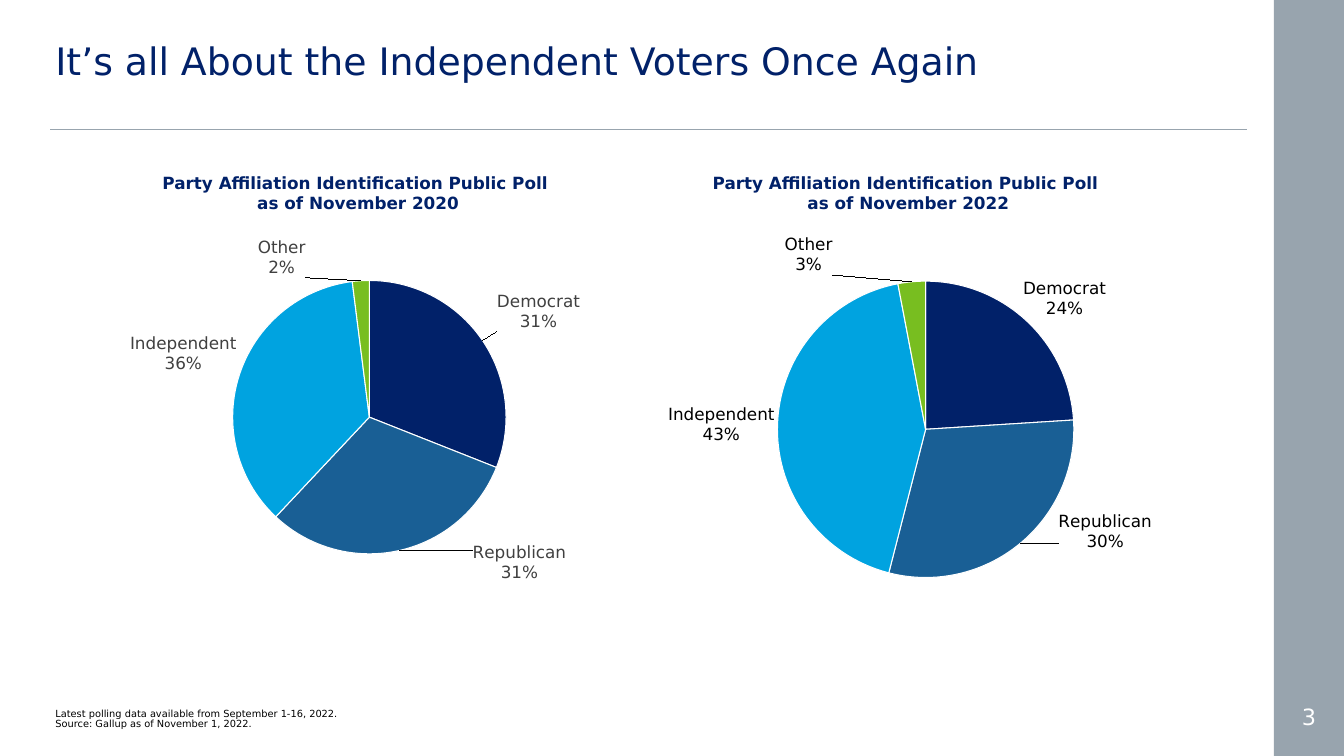
from copy import deepcopy

from pptx import Presentation
from pptx.chart.data import CategoryChartData
from pptx.dml.color import RGBColor
from pptx.enum.chart import XL_CHART_TYPE, XL_LABEL_POSITION
from pptx.enum.shapes import MSO_CONNECTOR, MSO_SHAPE
from pptx.enum.text import MSO_ANCHOR, PP_ALIGN
from pptx.oxml import parse_xml
from pptx.oxml.ns import nsdecls, qn
from pptx.util import Emu, Pt

PIE = XL_CHART_TYPE.PIE
OUT = XL_LABEL_POSITION.OUTSIDE_END
RECT = MSO_SHAPE.RECTANGLE
LINE = MSO_CONNECTOR.STRAIGHT
TOP, BOTTOM = MSO_ANCHOR.TOP, MSO_ANCHOR.BOTTOM
LEFT, MID = PP_ALIGN.LEFT, PP_ALIGN.CENTER

NAVY = RGBColor(0x01, 0x21, 0x69)
BLUE = RGBColor(0x19, 0x5F, 0x95)
SKY = RGBColor(0x00, 0xA3, 0xE0)
GREEN = RGBColor(0x78, 0xBE, 0x20)
GRAY = RGBColor(0x98, 0xA4, 0xAE)
DARK = RGBColor(0x40, 0x40, 0x40)
BLACK = RGBColor(0x00, 0x00, 0x00)
WHITE = RGBColor(0xFF, 0xFF, 0xFF)

SCALE = 12700
FONT = "DejaVu Sans"
PARTY = {"Democrat": NAVY, "Republican": BLUE, "Independent": SKY, "Other": GREEN}


def px(*nums):
    return [Emu(n * SCALE) for n in nums]


def layout(inner=False, **spots):
    modes = '<c:layoutTarget val="inner"/>' if inner else ""
    if inner:
        modes += '<c:xMode val="edge"/><c:yMode val="edge"/>'
    parts = "".join(f'<c:{key} val="{val}"/>' for key, val in spots.items())
    return parse_xml(
        f'<c:layout {nsdecls("c")}><c:manualLayout>{modes}{parts}'
        "</c:manualLayout></c:layout>"
    )


class Deck:
    def __init__(self):
        self.prs = Presentation()
        self.prs.slide_width, self.prs.slide_height = px(1920, 1080)
        self.slide = self.prs.slides.add_slide(self.prs.slide_layouts[6])
        self.shapes = self.slide.shapes

    def style(self, font, size, color, bold=False):
        form = {"name": FONT, "size": Pt(size), "bold": bold}
        for key, val in form.items():
            setattr(font, key, val)
        font.color.rgb = color

    def bar(self, box, color):
        shape = self.shapes.add_shape(RECT, *px(*box))
        shape.shadow.inherit = False
        shape.fill.solid()
        shape.fill.fore_color.rgb = color
        shape.line.fill.background()

    def rule(self, ends, color, width):
        line = self.shapes.add_connector(LINE, *px(*ends))
        line.line.color.rgb = color
        line.line.width = Pt(width)
        line._element.spPr.append(parse_xml(f'<a:effectLst {nsdecls("a")}/>'))

    def text(self, box, lines, size, color, bold=False, align=LEFT,
             anchor=TOP, space=None):
        frame = self.shapes.add_textbox(*px(*box)).text_frame
        frame.word_wrap = True
        frame.vertical_anchor = anchor
        for i, line in enumerate(lines):
            para = frame.paragraphs[0] if i == 0 else frame.add_paragraph()
            para.alignment = align
            para.line_spacing = space
            run = para.add_run()
            run.text = line
            self.style(run.font, size, color, bold)

    def pie(self, box, vals, color, plot, shifts):
        data = CategoryChartData(number_format="0%")
        data.categories = list(PARTY)
        data.add_series("Series 1", vals)
        chart = self.shapes.add_chart(PIE, *px(*box), data).chart
        chart.has_title = chart.has_legend = False
        self.style(chart.font, 10, BLACK)
        area = chart._chartSpace.chart.plotArea
        for old in area.findall(qn("c:layout")):
            area.remove(old)
        area.insert(0, layout(inner=True, **plot))
        chart.plots[0].vary_by_categories = True
        series = chart.plots[0].series[0]
        for i, fill in enumerate(PARTY.values()):
            look = series.points[i].format
            look.fill.solid()
            look.fill.fore_color.rgb = fill
            look.line.color.rgb = WHITE
            look.line.width = Pt(1.5)
        self.label(series.data_labels, color, shifts)

    def label(self, labels, color, shifts):
        form = {
            "show_value": True, "show_category_name": True,
            "show_percentage": False, "number_format": "0%",
            "number_format_is_linked": False, "position": OUT,
        }
        for key, val in form.items():
            setattr(labels, key, val)
        self.style(labels.font, 24, color)
        root = labels._element
        gap = parse_xml(f'<c:separator {nsdecls("c")}>\n</c:separator>')
        last = root.find(qn("c:showBubbleSize"))
        if last is None:
            last = root.find(qn("c:showPercent"))
        last.addnext(gap)
        lead = qn("c:showLeaderLines")
        base = [node for node in root if node.tag != lead]
        for at, (name, (x, y)) in enumerate(shifts.items()):
            idx = list(PARTY).index(name)
            item = parse_xml(f'<c:dLbl {nsdecls("c")}><c:idx val="{idx}"/></c:dLbl>')
            item.append(layout(x=x, y=y))
            for node in base:
                item.append(deepcopy(node))
            root.insert(at, item)


def main():
    deck = Deck()
    deck.bar((1820, 0, 100, 1080), GRAY)
    deck.text((1820, 1001, 100, 58), ["3"], 32, WHITE, align=MID)
    deck.rule((72, 185, 1782, 185), GRAY, 0.5)
    deck.text((72, 58, 1710, 75),
              ["It’s all About the Independent Voters Once Again"],
              54, NAVY, space=0.9)
    deck.text((72, 978, 1710, 67),
              ["Latest polling data available from September 1-16, 2022.",
               "Source: Gallup as of November 1, 2022."],
              14, BLACK, anchor=BOTTOM, space=Pt(14))
    polls = [
        (2022, 870, (858, 332, 868, 536), (0.24, 0.3, 0.43, 0.03), BLACK,
         {"x": 0.29, "y": 0.13, "w": 0.49, "h": 0.79},
         {"Democrat": (-0.01, 0), "Republican": (0.06, -0.09),
          "Other": (-0.13, -0.01)}),
        (2020, 84, (72, 332, 868, 528), (0.31, 0.31, 0.36, 0.02), DARK,
         {"x": 0.3, "y": 0.13, "w": 0.45, "h": 0.74},
         {"Democrat": (0.02, -0.02), "Republican": (0.12, -0.03),
          "Other": (-0.13, 0)}),
    ]
    for year, left, box, vals, color, plot, shifts in polls:
        deck.text((left, 243, 855, 66),
                  ["Party Affiliation Identification Public Poll ",
                   f"as of November {year}"],
                  24, NAVY, bold=True, align=MID)
        deck.pie(box, vals, color, plot, shifts)
    deck.prs.save("out.pptx")


if __name__ == "__main__":
    main()
